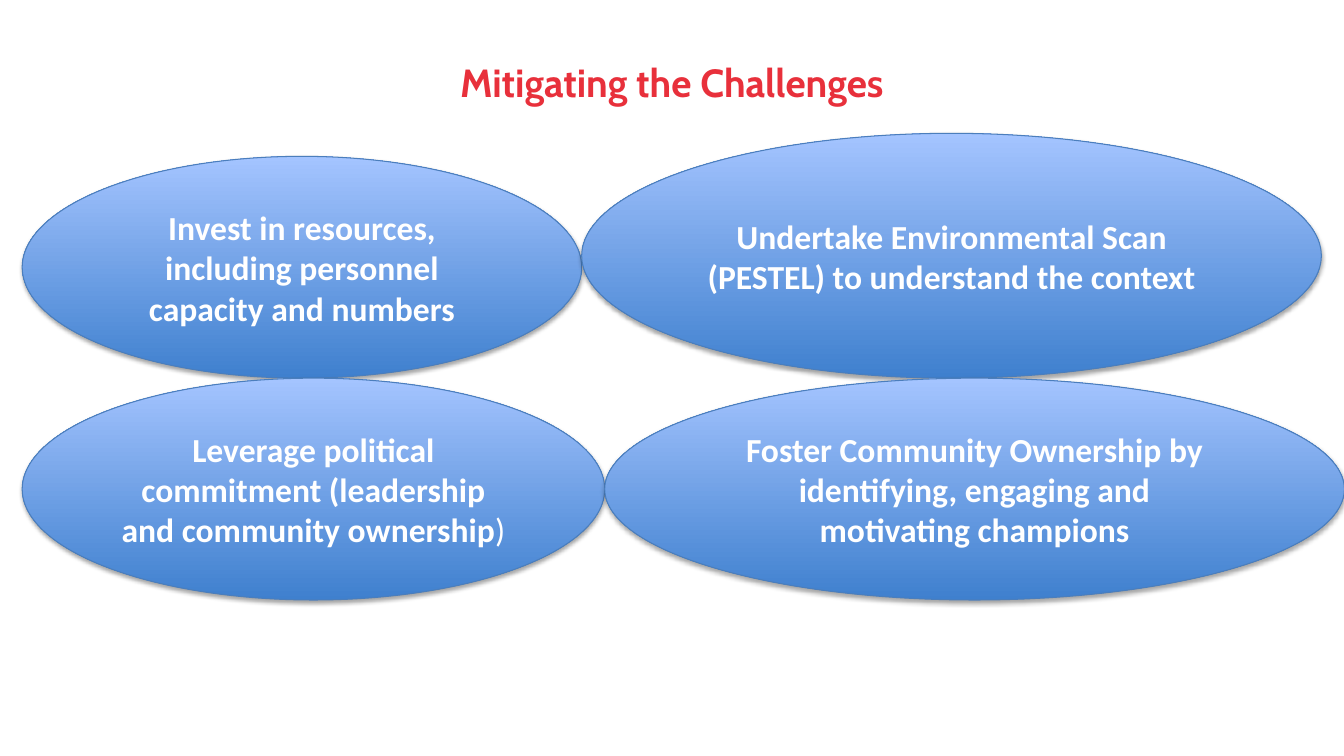
from lxml import etree
from pptx import Presentation
from pptx.dml.color import RGBColor
from pptx.enum import shapes, text
from pptx.oxml import ns
from pptx.util import Cm, Pt

RED = RGBColor(0xE8, 0x30, 0x3B)
WHITE = RGBColor(0xFF, 0xFF, 0xFF)
DARK_BLUE = RGBColor(0x3F, 0x80, 0xCE)
LIGHT_BLUE = RGBColor(0xA4, 0xC4, 0xFF)
OUTLINE = RGBColor(0x4B, 0x7E, 0xBC)

LEFT = 0.56
MIDDLE = 9.53  # the upper ellipses end here and the lower ones start here


def format_run(r, font, size, color, bold=True):
    r.font.name = font
    r.font.size = Pt(size)
    r.font.bold = bold
    r.font.color.rgb = color


def add_shadow(sp):
    """Give the shape a soft shadow that falls straight down."""
    sp.shadow.inherit = False
    effects = sp._element.spPr.find(ns.qn("a:effectLst"))
    shadow = etree.SubElement(effects, ns.qn("a:outerShdw"), blurRad=str(Pt(3.1)),
                              dist=str(Pt(1.8)), dir="5400000", rotWithShape="0")
    color = etree.SubElement(shadow, ns.qn("a:srgbClr"), val="000000")
    etree.SubElement(color, ns.qn("a:alpha"), val="35000")


prs = Presentation()
prs.slide_width, prs.slide_height = Cm(33.87), Cm(19.05)
s = prs.slides.add_slide(prs.slide_layouts[5])

title = s.shapes.title
title.left, title.top, title.width, title.height = Cm(LEFT), Cm(0.76), Cm(32.74), Cm(2.59)
tf = title.text_frame
tf.text = "Mitigating the Challenges"
tf.vertical_anchor = text.MSO_ANCHOR.MIDDLE
p = tf.paragraphs[0]
p.alignment = text.PP_ALIGN.CENTER
format_run(p.runs[0], "Cabin", 28, RED)

# Each row: top, height, then width, bold text and regular ending of each ellipse
rows = [
    (MIDDLE - 5.59, 5.59, 14.1, LEFT,
     "Invest in resources, including personnel capacity and numbers", ""),
    (MIDDLE - 6.17, 6.17, 18.64, LEFT + 14.1,
     "Undertake Environmental Scan (PESTEL) to understand the context", ""),
    (MIDDLE, 5.59, 14.68, LEFT,
     "Leverage political commitment (leadership and community ownership", ")"),
    (MIDDLE, 5.59, 18.64, LEFT + 14.68,
     "Foster Community Ownership by identifying, engaging and motivating champions", ""),
]
for top, height, width, left, wording, ending in rows:
    sp = s.shapes.add_shape(shapes.MSO_SHAPE.OVAL, Cm(left), Cm(top), Cm(width), Cm(height))
    sp.fill.gradient()
    sp.fill.gradient_angle = 90
    for stop, color in zip(sp.fill.gradient_stops, (DARK_BLUE, LIGHT_BLUE)):
        stop.color.rgb = color
    sp.line.color.rgb = OUTLINE
    sp.line.width = Pt(0.75)
    add_shadow(sp)

    tf = sp.text_frame
    tf.word_wrap = True
    tf.vertical_anchor = text.MSO_ANCHOR.MIDDLE
    tf.text = wording
    p = tf.paragraphs[0]
    p.alignment = text.PP_ALIGN.CENTER
    format_run(p.runs[0], "Calibri", 24, WHITE)
    if ending:
        r = p.add_run()
        r.text = ending
        format_run(r, "Calibri", 24, WHITE, bold=False)

prs.save("out.pptx")
